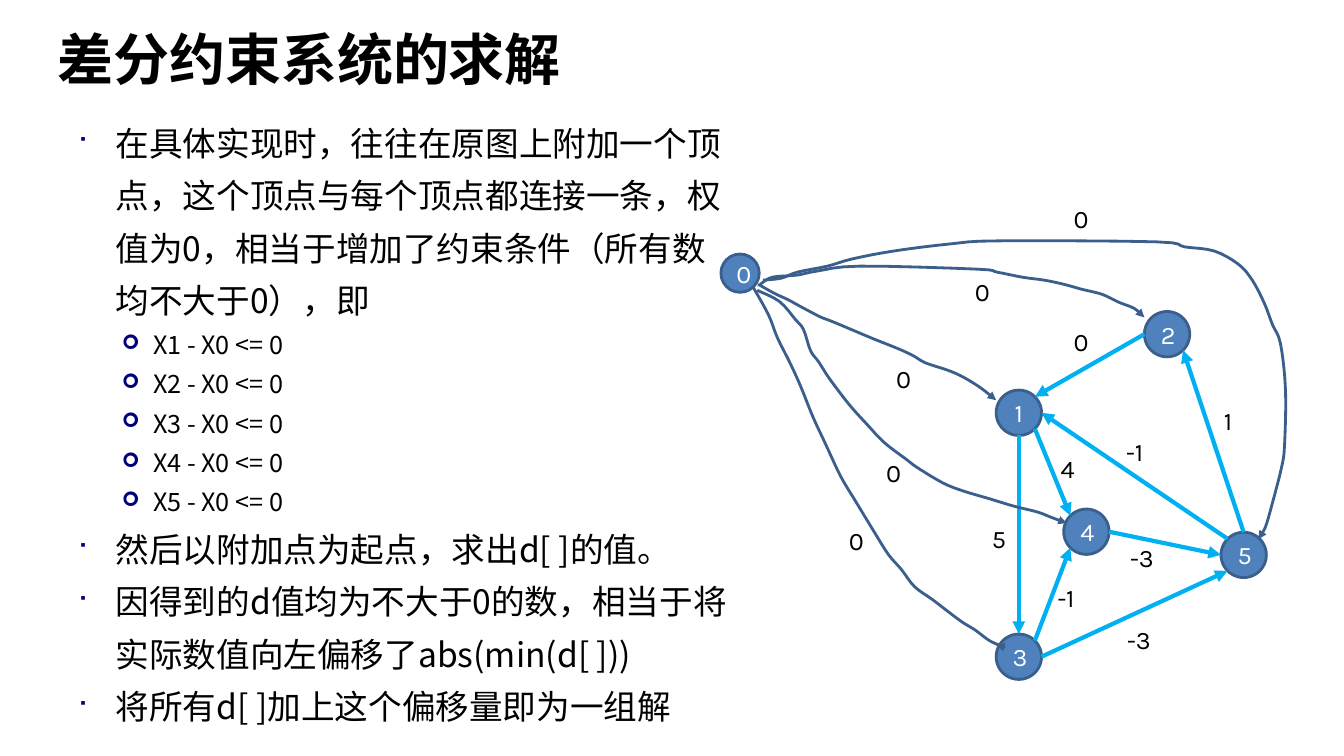
from math import cos, radians, sin

from lxml.etree import SubElement
from pptx import Presentation
from pptx.dml.color import RGBColor
from pptx.enum.shapes import MSO_CONNECTOR, MSO_SHAPE
from pptx.enum.text import MSO_ANCHOR, PP_ALIGN
from pptx.oxml.ns import qn
from pptx.util import Inches, Pt

CELL = Inches(0.1)
BLACK, WHITE = "000000", "FFFFFF"
BULLET, NODE, CURVE, EDGE = "00007D", "4F81BD", "3A5F8C", "00B0F0"
CHINESE_FONT, GRAPH_FONT = "Noto Sans CJK SC", "Karla"
BULLET_LEVELS = [("■", 75, 3.8, -3.8, 24), ("➢", 80, 7.5, -3.1, 18)]
SITES = ["top", "top left", "left", "bottom left",
         "bottom", "bottom right", "right", "top right"]

TITLE = "差分约束系统的求解"
BODY = [
    (0, "在具体实现时，往往在原图上附加一个顶点，这个顶点与每个顶点都连接一条，"
        "权值为0，相当于增加了约束条件（所有数均不大于0），即"),
    *[(1, f"X{number} - X0 <= 0") for number in range(1, 6)],
    (0, "然后以附加点为起点，求出d[ ]的值。"),
    (0, "因得到的d值均为不大于0的数，相当于将实际数值向左偏移了abs(min(d[ ]))"),
    (0, "将所有d[ ]加上这个偏移量即为一组解"),
]

NODES = {
    "1": (101.05, 40.95, 4.5),
    "2": (115.75, 33.15, 4.5),
    "5": (123.35, 55.05, 4.5),
    "4": (107.75, 52.75, 4.5),
    "3": (101.05, 65.15, 4.5),
    "0": (73.4, 27.1, 3.8),
}
EDGES = [
    ("2", "left", "1", "top right"),
    ("5", "top left", "1", "right"),
    ("5", "top", "2", "bottom right"),
    ("1", "bottom", "3", "top"),
    ("1", "bottom right", "4", "top left"),
    ("3", "top right", "4", "bottom left"),
    ("4", "right", "5", "left"),
    ("3", "right", "5", "bottom left"),
]
CURVES = [
    [(75.2, 28.2), (76.8, 29.1), (78.1, 29.7), (79.2, 30.3), (80.7, 31.1),
     (81.5, 31.5), (82.8, 32), (86.6, 33.6), (89.1, 34.6), (90.6, 35.3),
     (91.8, 36), (94.2, 36.8), (95.7, 37.5), (97.3, 38.5), (98.8, 39.7)],
    [(75.4, 28.2), (76.6, 27.5), (79, 27.3), (81, 26.9), (85.3, 26.4),
     (96.9, 26.7), (98.9, 27), (101.4, 27.5), (103.6, 27.8), (105.5, 28.2),
     (107.3, 28.7), (109.3, 29.2), (111, 30), (112.5, 30.6), (113.5, 31.5)],
    [(74.7, 28.5), (76.2, 31.2), (77.1, 33.5), (78.3, 35.9), (79.4, 38.3),
     (80.6, 41.3), (81.9, 44.1), (83.4, 47.3), (84.9, 49.8), (86.6, 52.6),
     (88.1, 55), (89.4, 56.5), (90.7, 58.2), (92.5, 59.5), (93.8, 60.5),
     (95.4, 61.7), (96.7, 62.5), (98.2, 63.6), (99.6, 64.2), (98.8, 64)],
    [(75.1, 28.8), (77.3, 29.9), (78.9, 31.7), (79.7, 32.7), (80.4, 34.8),
     (81.2, 35.9), (82.3, 37.6), (84.2, 40.1), (85.9, 42), (87.7, 43.9),
     (89.8, 45.5), (91, 46.4), (93.5, 47.9), (95.5, 48.7), (98.2, 49.5),
     (100.5, 50.2), (102.9, 50.8), (104.2, 51.3), (105.8, 51.9)],
    [(75.7, 27.8), (77.5, 27.6), (79.1, 27), (82.1, 26.4), (84.5, 25.7),
     (88.7, 24.9), (94.3, 24.2), (99.1, 23.9), (114.7, 24), (117.5, 24.5),
     (120.4, 24.9), (122.8, 26.2), (124.2, 27.8), (125.4, 30.1),
     (126.2, 32.2), (127, 34.1), (127.5, 38.7), (127.4, 44.2), (127.1, 46.4),
     (126.2, 49.9), (125.5, 52.3), (124.8, 53.5)],
]
EDGE_WEIGHTS = [
    ("0", 105.5, 31.9), ("-1", 110.7, 42.8), ("1", 120.4, 39.7),
    ("5", 97.4, 51.4), ("4", 104.2, 44.5), ("-1", 103.9, 57.3),
    ("-3", 110.8, 61.4), ("-3", 111.1, 53.3),
]
CURVE_WEIGHTS = [
    ("0", 95.7, 26.9), ("0", 105.5, 19.7), ("0", 87.9, 35.6),
    ("0", 86.9, 44.9), ("0", 83.2, 51.6),
]


def color(value):
    return RGBColor.from_string(value)


def cells(*counts):
    return [round(count * CELL) for count in counts]


def style(para, size, font, shade, bold=False):
    para.font.size = Pt(size)
    para.font.name = font
    para.font.bold = bold
    para.font.color.rgb = color(shade)
    defaults = para.font._element
    SubElement(defaults, qn("a:ea"), typeface=CHINESE_FONT)


def add_text_box(page, left, top, width, height):
    frame = page.shapes.add_textbox(*cells(left, top, width, height)).text_frame
    frame.word_wrap = True
    return frame


def add_bullet(para, level):
    symbol, percent, margin, indent, size = BULLET_LEVELS[level]
    para.level = level
    para.line_spacing = 1.3
    properties = para._p.get_or_add_pPr()
    left, first = cells(margin, indent)
    properties.set("marL", str(left))
    properties.set("indent", str(first))
    shade = SubElement(properties, qn("a:buClr"))
    SubElement(shade, qn("a:srgbClr"), val=BULLET)
    SubElement(properties, qn("a:buSzPct"), val=str(percent * 1000))
    SubElement(properties, qn("a:buFont"), typeface="Wingdings", charset="2")
    SubElement(properties, qn("a:buChar"), char=symbol)
    style(para, size, CHINESE_FONT, BLACK)


def add_title(page):
    frame = add_text_box(page, 4.7, 1.1, 103.2, 9.4)
    frame.vertical_anchor = MSO_ANCHOR.MIDDLE
    para = frame.paragraphs[0]
    para.text = TITLE
    style(para, 40, "Arial", BLACK, bold=True)


def add_body(page):
    frame = add_text_box(page, 6.7, 10.5, 66.4, 59.7)
    for index, (level, text) in enumerate(BODY):
        para = frame.add_paragraph() if index else frame.paragraphs[0]
        para.text = text
        add_bullet(para, level)


def add_node(page, name):
    x, y, size = NODES[name]
    node = page.shapes.add_shape(
        MSO_SHAPE.OVAL, *cells(x - size / 2, y - size / 2, size, size))
    node.shadow.inherit = False
    node.fill.solid()
    node.fill.fore_color.rgb = color(NODE)
    node.line.color.rgb = color(CURVE)
    node.line.width = Pt(2)
    node.text_frame.vertical_anchor = MSO_ANCHOR.MIDDLE
    para = node.text_frame.paragraphs[0]
    para.text = name
    para.alignment = PP_ALIGN.CENTER
    style(para, 18, GRAPH_FONT, WHITE)


def make_arrow(shape, shade, width):
    shape.line.color.rgb = color(shade)
    shape.line.width = Pt(width)
    properties = shape._element.spPr
    SubElement(properties.find(qn("a:ln")), qn("a:tailEnd"), type="triangle")
    SubElement(properties, qn("a:effectLst"))


def site_point(name, site):
    x, y, size = NODES[name]
    angle = radians(90 + 45 * SITES.index(site))
    return cells(x + size / 2 * cos(angle), y - size / 2 * sin(angle))


def add_edge(page, source, source_site, target, target_site):
    edge = page.shapes.add_connector(
        MSO_CONNECTOR.STRAIGHT,
        *site_point(source, source_site), *site_point(target, target_site))
    make_arrow(edge, EDGE, 3)


def spline(before, start, end, after, share):
    return (2 * start + (end - before) * share
            + (2 * before - 5 * start + 4 * end - after) * share ** 2
            + (3 * start - before - 3 * end + after) * share ** 3) / 2


def smooth_points(points, steps=4):
    padded = [points[0], *points, points[-1]]
    for group in zip(padded, padded[1:], padded[2:], padded[3:]):
        for step in range(1, steps + 1):
            yield cells(*[spline(*axis, step / steps) for axis in zip(*group)])


def add_curve(page, points):
    builder = page.shapes.build_freeform(*cells(*points[0]))
    builder.add_line_segments(list(smooth_points(points)), close=False)
    curve = builder.convert_to_shape()
    curve.fill.background()
    make_arrow(curve, CURVE, 2)


def add_weight(page, text, left, top):
    para = add_text_box(page, left, top, 4.5, 4).paragraphs[0]
    para.text = text
    style(para, 18, GRAPH_FONT, BLACK)


def main():
    deck = Presentation()
    deck.slide_width, deck.slide_height = Inches(13.33), Inches(7.5)
    page = deck.slides.add_slide(deck.slide_layouts[6])
    add_title(page)
    add_body(page)
    for name in NODES:
        add_node(page, name)
    for edge in EDGES:
        add_edge(page, *edge)
    for points in CURVES:
        add_curve(page, points)
    for weight in EDGE_WEIGHTS + CURVE_WEIGHTS:
        add_weight(page, *weight)
    deck.save("out.pptx")


if __name__ == "__main__":
    main()
